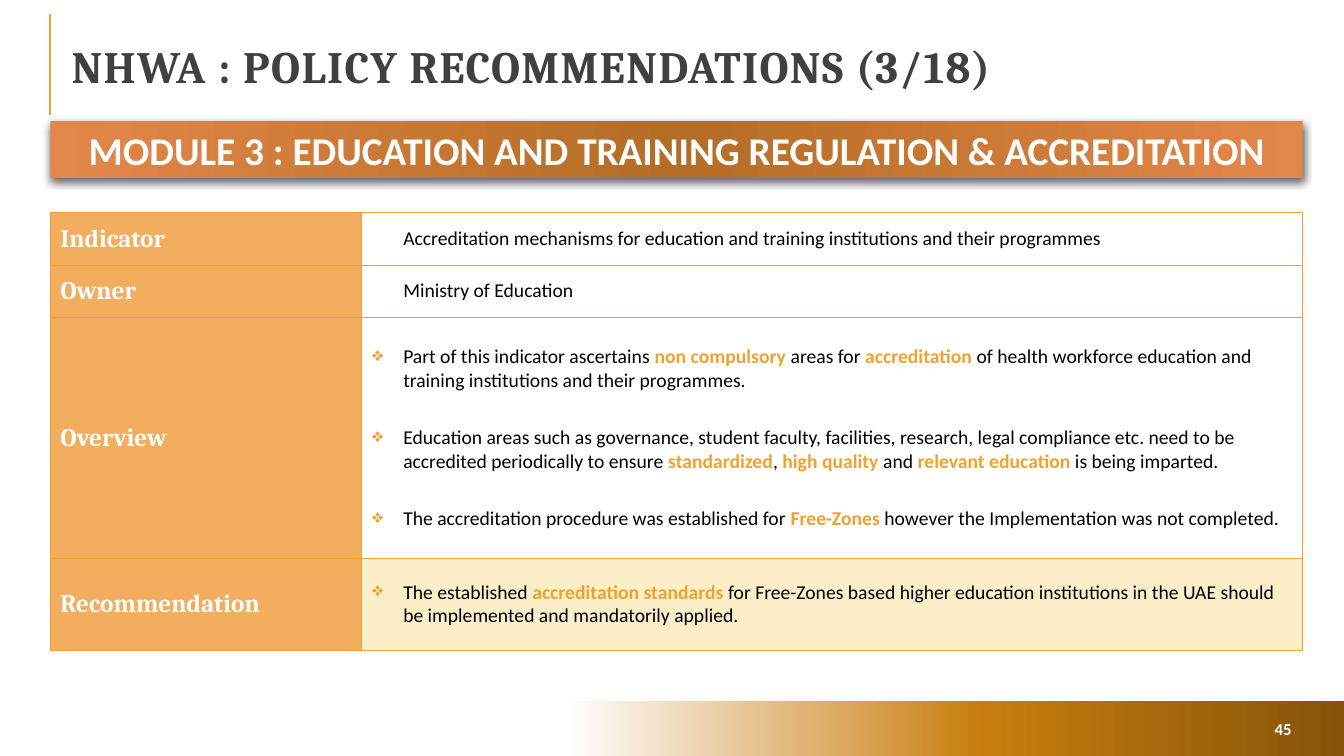
from pptx import Presentation
from pptx.dml.color import RGBColor
from pptx.enum.shapes import MSO_CONNECTOR, MSO_SHAPE
from pptx.enum.text import MSO_ANCHOR, MSO_AUTO_SIZE, PP_ALIGN
from pptx.oxml import parse_xml
from pptx.oxml.ns import nsdecls, qn
from pptx.util import Inches, Pt
from lxml.etree import SubElement

GOLD, WHITE, BLACK = "F0A22E", "FFFFFF", "000000"
LEFT, WIDTH = Inches(0.5), Inches(12.42)


def rgb(color):
    return RGBColor.from_string(color)


def add_text(p, text, size=14, font="Calibri", color=BLACK, bold=False, spacing=0):
    r = p.add_run()
    r.text = text
    r.font.size, r.font.name, r.font.bold = Pt(size), font, bold
    r.font.color.rgb = rgb(color)
    if spacing:
        r._r.get_or_add_rPr().set("spc", str(spacing * 100))


prs = Presentation()
prs.slide_width, prs.slide_height = Inches(13.33), Inches(7.5)
slide = prs.slides.add_slide(prs.slide_layouts[5])

# Accent line beside the title
line = slide.shapes.add_connector(MSO_CONNECTOR.STRAIGHT, LEFT, Inches(1.14), LEFT, Inches(0.14))
line.line.color.rgb = rgb(GOLD)
line.line.width = Pt(1.5)
SubElement(line._element.spPr, qn("a:effectLst"))

# Title
title = slide.shapes.title
title.left, title.top, title.width, title.height = map(Inches, (0.61, 0.28, 12.3, 0.84))
tf = title.text_frame
tf.auto_size = MSO_AUTO_SIZE.NONE
tf.vertical_anchor = MSO_ANCHOR.MIDDLE
p = tf.paragraphs[0]
p.alignment, p.line_spacing = PP_ALIGN.LEFT, 0.8
add_text(p, "NHWA : POLICY RECOMMENDATIONS (3/18)", size=32, font="Cambria",
         color="404040", bold=True, spacing=1)

# Gradient bars: footer, then module banner
bars = []
for left, top, width, height, stops in (
    (0, Inches(6.95), prs.slide_width, Inches(0.55),
     ((42, WHITE), (73, "C87D0E"), (100, "85540A"))),
    (LEFT, Inches(1.2), WIDTH, Inches(0.57),
     ((0, "E2874A"), (50, "B46D26"), (100, "E2874A"))),
):
    s = slide.shapes.add_shape(MSO_SHAPE.RECTANGLE, left, top, width, height)
    s.shadow.inherit = False
    s.line.fill.background()
    s.fill.gradient()
    s.fill.gradient_angle = 0
    stop_list = s._element.spPr.find(qn("a:gradFill")).find(qn("a:gsLst"))
    for stop in list(stop_list):
        stop_list.remove(stop)
    for position, color in stops:
        stop = SubElement(stop_list, qn("a:gs"), pos=str(position * 1000))
        SubElement(stop, qn("a:srgbClr"), val=color)
    bars.append(s)

# Banner shadow and text
banner = bars[1]
banner._element.spPr.find(qn("a:effectLst")).append(parse_xml(
    f'<a:outerShdw {nsdecls("a")} blurRad="{Pt(6)}" dist="{Pt(2)}" dir="5400000" rotWithShape="0">'
    f'<a:srgbClr val="{BLACK}"><a:alpha val="60000"/></a:srgbClr></a:outerShdw>'))
tf = banner.text_frame
tf.word_wrap = True
tf.vertical_anchor = MSO_ANCHOR.MIDDLE
p = tf.paragraphs[0]
p.alignment = PP_ALIGN.CENTER
add_text(p, "MODULE 3 : EDUCATION AND TRAINING REGULATION & ACCREDITATION",
         size=28, color=WHITE, bold=True)

# Table content: label, row height, fill, bulleted, space before, paragraphs
# Within a paragraph, every second piece is highlighted
rows = [
    ("Indicator", 0.52, WHITE, False, 0, [
        ["Accreditation mechanisms for education and training institutions and their programmes"]]),
    ("Owner", 0.52, WHITE, False, 0, [["Ministry of Education"]]),
    ("Overview", 2.39, WHITE, True, 24, [
        ["Part of this indicator ascertains ", "non compulsory ", "areas for ", "accreditation",
         " of health workforce education and training institutions and their programmes."],
        ["Education areas such as governance, student faculty, facilities, research, legal "
         "compliance etc. need to be accredited periodically to ensure ", "standardized", ", ",
         "high quality ", "and", " relevant education", " is being imparted."],
        ["The accreditation procedure was established for", " Free-Zones ",
         "however the Implementation was not completed."]]),
    ("Recommendation", 0.91, "FBEEC9", True, 0, [
        ["The established ", "accreditation standards ",
         "for Free-Zones based higher education institutions in the UAE should be implemented "
         "and mandatorily applied."]]),
]
table = slide.shapes.add_table(len(rows), 2, LEFT, Inches(2.11), WIDTH, Inches(4.34)).table
table.first_row = table.horz_banding = False
table.columns[0].width, table.columns[1].width = Inches(3.09), Inches(9.33)

for row, (label, height, fill, bulleted, before, paragraphs) in zip(table.rows, rows):
    row.height = Inches(height)
    for cell, color in zip(row.cells, ("F2AE5E", fill)):
        tcPr = cell._tc.get_or_add_tcPr()
        for side in ("lnL", "lnR", "lnT", "lnB"):
            border = SubElement(tcPr, qn(f"a:{side}"), w=str(Pt(0.75)))
            SubElement(SubElement(border, qn("a:solidFill")), qn("a:srgbClr"), val=GOLD)
        cell.fill.solid()
        cell.fill.fore_color.rgb = rgb(color)
        cell.vertical_anchor = MSO_ANCHOR.MIDDLE

    add_text(row.cells[0].text_frame.paragraphs[0], label, size=18, font="Cambria",
             color=WHITE, bold=True)

    tf = row.cells[1].text_frame
    for i, pieces in enumerate(paragraphs):
        p = tf.add_paragraph() if i else tf.paragraphs[0]
        p.space_before = Pt(before)
        pPr = p._p.get_or_add_pPr()
        pPr.set("marL", str(Inches(0.31)))
        if bulleted:
            pPr.set("indent", str(-Inches(0.31)))
            SubElement(SubElement(pPr, qn("a:buClr")), qn("a:srgbClr"), val=GOLD)
            SubElement(pPr, qn("a:buChar"), char="❖")
        for j, piece in enumerate(pieces):
            add_text(p, piece, color=GOLD if j % 2 else BLACK, bold=j % 2 == 1)

# Slide number
number = slide.shapes.add_textbox(Inches(11.85), Inches(7.08), Inches(1.06), Inches(0.3))
tf = number.text_frame
tf.word_wrap = True
tf.vertical_anchor = MSO_ANCHOR.MIDDLE
p = tf.paragraphs[0]
p.alignment = PP_ALIGN.RIGHT
add_text(p, "45", size=12, color=WHITE, bold=True)

prs.save("out.pptx")
